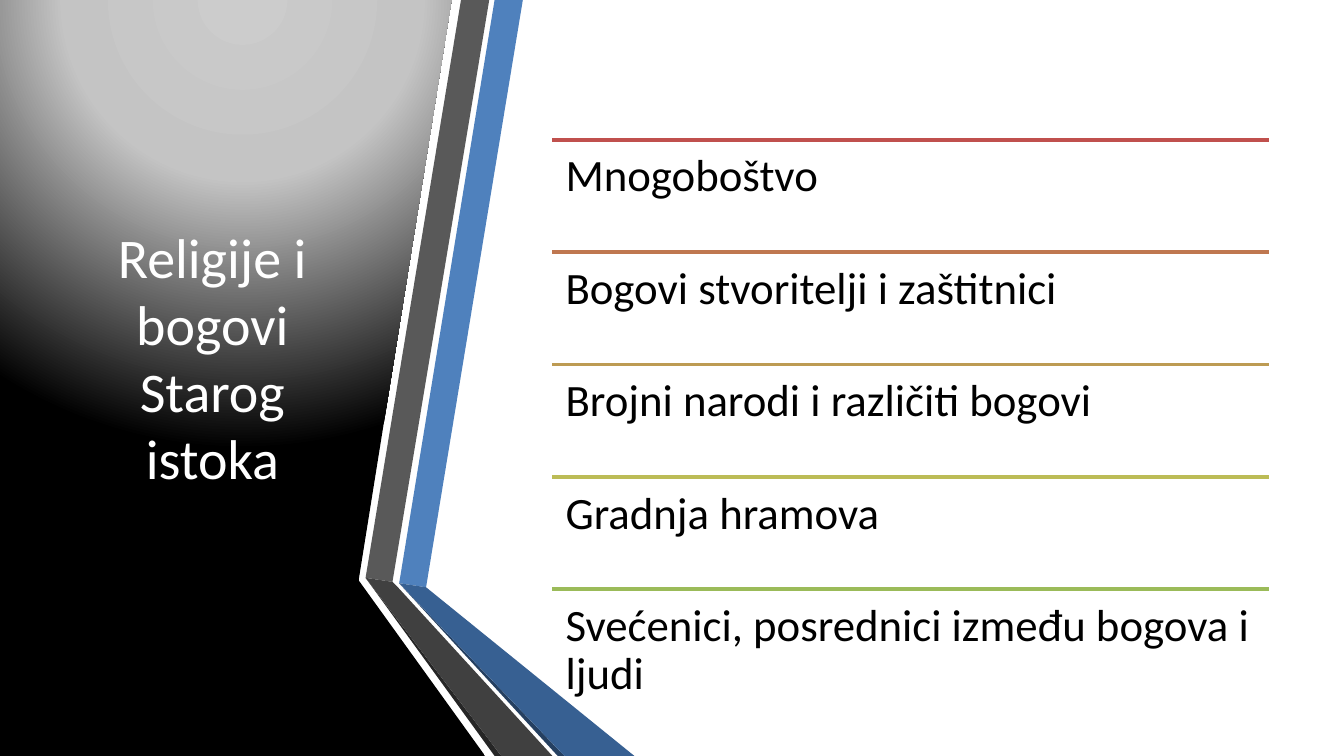
from lxml.etree import SubElement
from pptx import Presentation
from pptx.dml.color import RGBColor
from pptx.enum.shapes import MSO_CONNECTOR
from pptx.enum.text import MSO_ANCHOR, MSO_AUTO_SIZE, PP_ALIGN
from pptx.oxml import parse_xml
from pptx.oxml.ns import nsdecls, qn
from pptx.util import Inches, Pt

THEME = {
    "font": "Calibri",
    "title_size": 30,
    "item_size": 24,
    "title": "FFFFFF",
    "item": "000000",
    "glow": [(0, "CCCCCC"), (40, "C4C4C4"), (100, "000000")],
    "blue": "4F81BD",
    "blue_mid": "376092",
    "blue_dark": "254061",
    "gray": "595959",
    "gray_mid": "404040",
    "gray_dark": "262626",
    "rules": ["C0504D", "BF7750", "BD9B53", "BCBC56", "9BBB59"],
}
W = 10
H = W * 9 / 16
TITLE = "Religije i bogovi Starog istoka"
ITEMS = [
    "Mnogoboštvo",
    "Bogovi stvoritelji i zaštitnici",
    "Brojni narodi i različiti bogovi",
    "Gradnja hramova",
    "Svećenici, posrednici između bogova i ljudi",
]
PANEL = [(2.64, 0), (3.36, 0), (2.67, 4.31), (2.67, 4.32), (3.61, H), (0, H), (0, 0)]
BANDS = [
    ("blue", [(2.97, 4.34), (3.17, 4.37), (3.89, 0), (3.68, 0)]),
    ("gray", [(3.64, 0), (3.43, 0), (2.72, 4.3), (2.92, 4.33)]),
    ("gray_dark", [(2.72, 4.3), (3.68, H), (3.73, H)]),
    ("blue_dark", [(2.97, 4.34), (4.15, H), (4.2, H)]),
    ("blue_mid", [(2.97, 4.34), (4.2, H), (4.72, H), (3.17, 4.37)]),
    ("gray_mid", [(4.11, H), (2.96, 4.37), (2.92, 4.33), (2.72, 4.3), (3.73, H)]),
]
LIST_X, LIST_Y, LIST_W, LIST_H = 4.11, 1.04, 5.33, 4.18


def rgb(value):
    return RGBColor.from_string(value)


def add_polygon(s, points):
    pts = [(Inches(x), Inches(y)) for x, y in points]
    builder = s.shapes.build_freeform(*pts[0], scale=1.0)
    builder.add_line_segments(pts[1:], close=True)
    sp = builder.convert_to_shape()
    sp.shadow.inherit = False
    sp.line.fill.background()
    return sp


def fill_glow(sp, stops):
    sp.fill.gradient()
    old = sp._element.spPr.find(qn("a:gradFill"))
    gs = "".join(
        f'<a:gs pos="{pos * 1000}"><a:srgbClr val="{color}"/></a:gs>' for pos, color in stops
    )
    grad = parse_xml(
        f'<a:gradFill {nsdecls("a")} rotWithShape="1"><a:gsLst>{gs}</a:gsLst>'
        '<a:path path="circle">'
        '<a:fillToRect l="50000" t="-80000" r="50000" b="180000"/>'
        "</a:path></a:gradFill>"
    )
    old.getparent().replace(old, grad)


def add_run(p, text, size, color):
    r = p.add_run()
    r.text = text
    r.font.name = THEME["font"]
    r.font.size = Pt(size)
    r.font.color.rgb = rgb(color)


def add_rule(s, y, color):
    line = s.shapes.add_connector(
        MSO_CONNECTOR.STRAIGHT, Inches(LIST_X), Inches(y), Inches(LIST_X + LIST_W), Inches(y)
    )
    line.line.color.rgb = rgb(color)
    line.line.width = Pt(2)
    SubElement(line._element.spPr, qn("a:effectLst"))


def add_item(s, y, height, text):
    box = s.shapes.add_textbox(Inches(LIST_X), Inches(y), Inches(LIST_W), Inches(height))
    tf = box.text_frame
    tf.word_wrap = True
    tf.margin_left = tf.margin_right = tf.margin_top = tf.margin_bottom = Inches(0.1)
    p = tf.paragraphs[0]
    p.line_spacing = 0.9
    add_run(p, text, THEME["item_size"], THEME["item"])


def place_title(s):
    title = s.shapes.title
    title.left, title.top = Inches(0.44), Inches(0.56)
    title.width, title.height = Inches(2.28), Inches(4.19)
    tf = title.text_frame
    tf.word_wrap = True
    tf.auto_size = MSO_AUTO_SIZE.NONE
    tf.vertical_anchor = MSO_ANCHOR.MIDDLE
    p = tf.paragraphs[0]
    p.alignment = PP_ALIGN.CENTER
    add_run(p, TITLE, THEME["title_size"], THEME["title"])
    title._element.getparent().append(title._element)


def main():
    prs = Presentation()
    prs.slide_width, prs.slide_height = Inches(W), Inches(H)
    s = prs.slides.add_slide(prs.slide_layouts[5])

    fill_glow(add_polygon(s, PANEL), THEME["glow"])
    for color, points in BANDS:
        sp = add_polygon(s, points)
        sp.fill.solid()
        sp.fill.fore_color.rgb = rgb(THEME[color])

    place_title(s)

    row_h = LIST_H / len(ITEMS)
    for i, (text, color) in enumerate(zip(ITEMS, THEME["rules"])):
        y = LIST_Y + i * row_h
        add_rule(s, y, color)
        add_item(s, y, row_h, text)

    prs.save("out.pptx")


if __name__ == "__main__":
    main()
